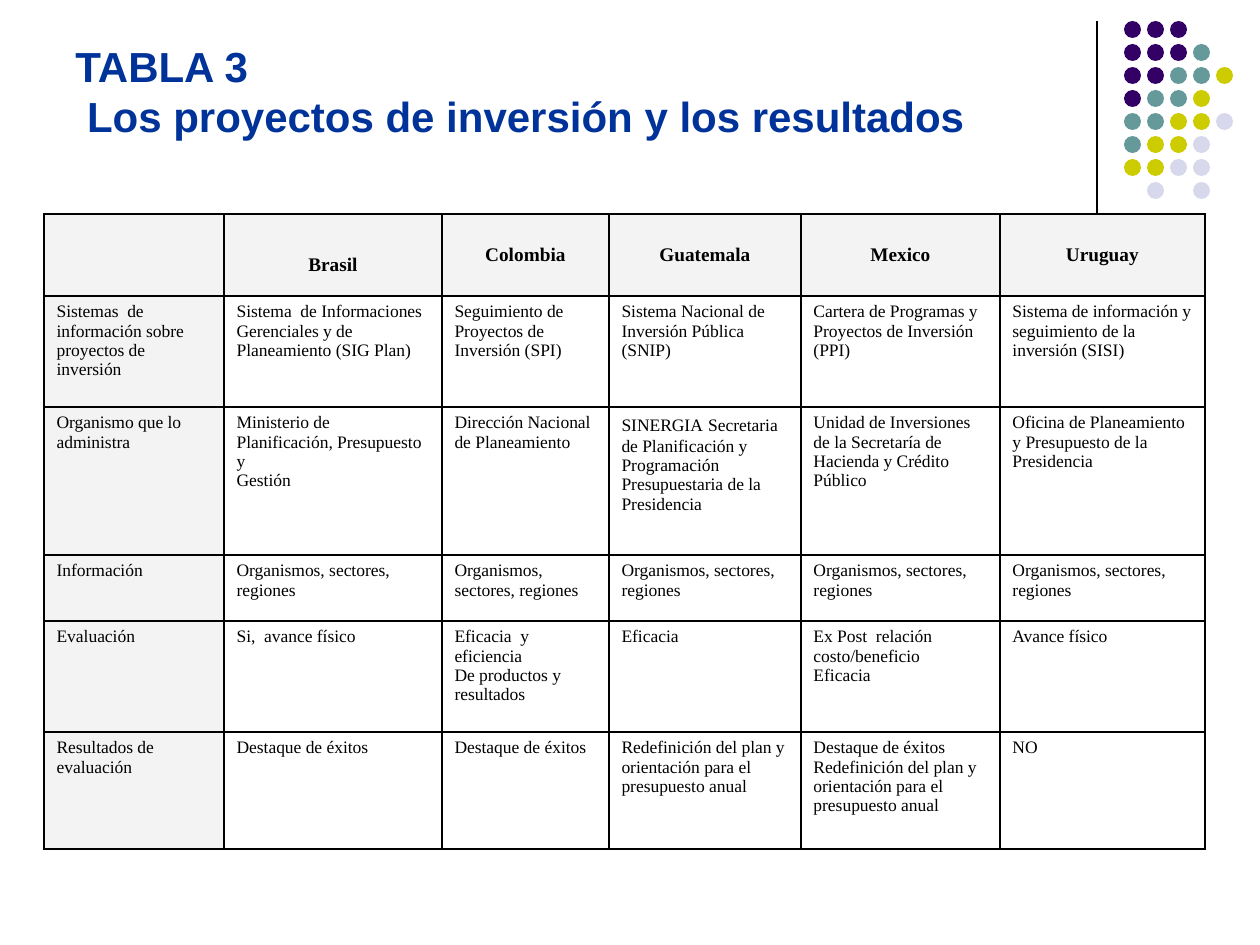
from lxml import etree
from pptx import Presentation
from pptx import util as u
from pptx.dml.color import RGBColor
from pptx.enum import shapes, text
from pptx.oxml.ns import qn

EMU_PER_PX = 914400 / 126

DOT_COLORS = {"P": "330066", "T": "669999", "Y": "CCCC00", "L": "D8D8EC"}
DOT_ROWS = ["PPP", "PPPT", "PPTTY", "PTTY", "TTYYL", "TYYL", "YYLL", " L L"]

COLUMN_WIDTHS = [180, 218, 167, 192, 199, 205]
ROW_HEIGHTS = [82, 111, 148, 66, 111, 117]
REGIONS = "Organismos, sectores, regiones"
SUCCESSES = "Destaque de éxitos"
REDEFINITION = "Redefinición del plan y orientación para el presupuesto anual"

# "\n" separates paragraphs, "|" separates runs
TABLE_ROWS = [
    ["", "Brasil", "Colombia", "Guatemala", "Mexico", "Uruguay"],
    ["Sistemas  de  información sobre proyectos de inversión",
     "Sistema  de Informaciones Gerenciales y de Planeamiento (SIG Plan)",
     "Seguimiento de Proyectos de Inversión (SPI)",
     "Sistema Nacional de Inversión Pública (SNIP)",
     "Cartera de Programas y Proyectos de Inversión (PPI)",
     "Sistema de información y seguimiento de la inversión (SISI)"],
    ["Organismo que lo administra",
     "Ministerio de Planificación, Presupuesto y\nGestión",
     "Dirección Nacional de Planeamiento",
     "SINERGIA| |Secretaria de Planificación y Programación "
     "Presupuestaria de la Presidencia",
     "Unidad de Inversiones de la Secretaría de Hacienda y Crédito Público",
     "Oficina de Planeamiento y Presupuesto de la Presidencia"],
    ["Información"] + [REGIONS] * 5,
    ["Evaluación", "Si,  avance físico",
     "Eficacia  y eficiencia\nDe productos y resultados", "Eficacia",
     "Ex Post  relación costo/beneficio\nEficacia", "Avance físico"],
    ["Resultados de evaluación", SUCCESSES, SUCCESSES, REDEFINITION,
     SUCCESSES + "\n" + REDEFINITION, "NO"],
]


def px(value):
    return u.Emu(round(value * EMU_PER_PX))


def color(value):
    return RGBColor.from_string(value)


class SlideBuilder:
    title_font, body_font = "Arial", "Times New Roman"
    title_color, ink, shade, paper = "003399", "000000", "F3F3F3", "FFFFFF"

    def __init__(self, slide):
        self.slide = slide

    def format_run(self, run, font, size, ink, bold):
        run.font.name = font
        run.font.size = u.Pt(size)
        run.font.color.rgb = color(ink)
        run.font.bold = bold

    def line(self, x1, y1, x2, y2):
        connector = self.slide.shapes.add_connector(
            shapes.MSO_CONNECTOR.STRAIGHT, px(x1), px(y1), px(x2), px(y2))
        connector.line.color.rgb = color(self.ink)
        connector.line.width = u.Pt(0.75)
        etree.SubElement(connector._element.spPr, qn("a:effectLst"))

    def dot(self, x, y, size, fill):
        shape = self.slide.shapes.add_shape(
            shapes.MSO_SHAPE.OVAL, px(x), px(y), px(size), px(size))
        shape.shadow.inherit = False
        shape.fill.solid()
        shape.fill.fore_color.rgb = color(fill)
        shape.line.fill.background()

    def title(self, x, y, width, height, content):
        box = self.slide.shapes.add_textbox(px(x), px(y), px(width), px(height))
        frame = box.text_frame
        frame.word_wrap = True
        frame.vertical_anchor = text.MSO_ANCHOR.BOTTOM
        frame.margin_bottom = px(54)
        frame.text = content
        for paragraph in frame.paragraphs:
            for run in paragraph.runs:
                self.format_run(run, self.title_font, 24, self.title_color, True)

    def table(self, x, y, widths, heights, rows):
        table = self.slide.shapes.add_table(
            len(rows), len(widths), px(x), px(y),
            px(sum(widths)), px(sum(heights))).table
        table.first_row = table.horz_banding = False
        for column, width in zip(table.columns, widths):
            column.width = px(width)
        for row, height in zip(table.rows, heights):
            row.height = px(height)
        for i, row in enumerate(rows):
            for j, content in enumerate(row):
                self.cell(table.cell(i, j), content, i == 0, j == 0)
        return table

    def cell(self, cell, content, is_header, is_label):
        self.borders(cell)
        cell.fill.solid()
        cell.fill.fore_color.rgb = color(
            self.shade if is_header or is_label else self.paper)
        if is_header:
            cell.vertical_anchor = text.MSO_ANCHOR.MIDDLE
        size = 11 if is_header else 10
        cell.text_frame.text = content.replace("|", "")
        for paragraph, line in zip(cell.text_frame.paragraphs, content.split("\n")):
            if is_header:
                paragraph.alignment = text.PP_ALIGN.CENTER
            paragraph.font.size = u.Pt(size)
            paragraph.clear()
            for part in line.split("|"):
                run = paragraph.add_run()
                run.text = part
                self.format_run(run, self.body_font, 12 if part == " " else size,
                                self.ink, is_header)

    def borders(self, cell):
        properties = cell._tc.get_or_add_tcPr()
        for side in ("a:lnL", "a:lnR", "a:lnT", "a:lnB"):
            border = etree.SubElement(properties, qn(side), w=str(u.Pt(1)))
            fill = etree.SubElement(border, qn("a:solidFill"))
            etree.SubElement(fill, qn("a:srgbClr"), val=self.ink)


def main():
    presentation = Presentation()
    presentation.slide_width, presentation.slide_height = px(1260), px(945)
    builder = SlideBuilder(presentation.slides.add_slide(presentation.slide_layouts[6]))

    # Corner decoration: rule and dot grid
    builder.line(1097, 21, 1097, 231)
    for i, row in enumerate(DOT_ROWS):
        for j, key in enumerate(row):
            if key in DOT_COLORS:
                builder.dot(1124 + 23 * j, 21 + 23 * i, 17, DOT_COLORS[key])

    # Title
    builder.title(63, 16, 1040, 179,
                  "TABLA 3\n Los proyectos de inversión y los resultados")

    # Comparison table, with the Brasil heading set one line lower
    table = builder.table(44, 214, COLUMN_WIDTHS, ROW_HEIGHTS, TABLE_ROWS)
    table.cell(0, 1).margin_top = px(26)

    presentation.save("out.pptx")


if __name__ == "__main__":
    main()
